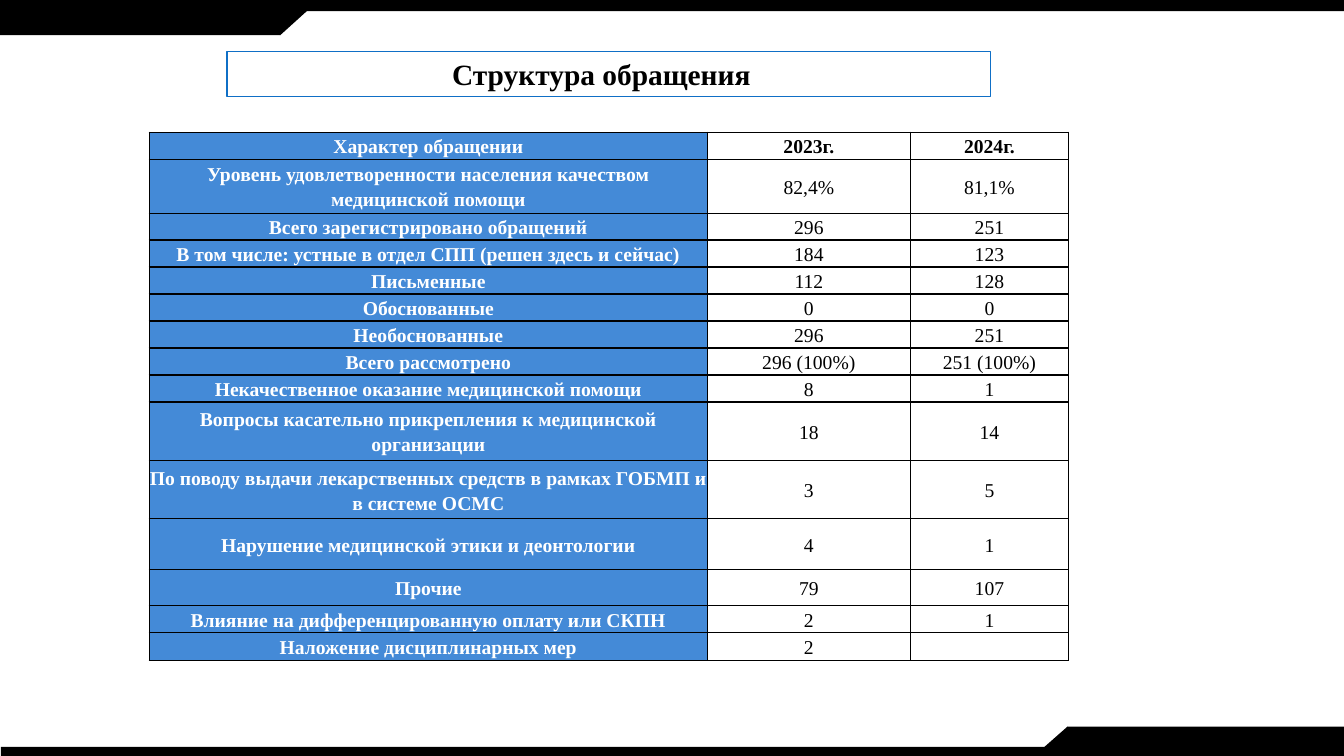
from pptx import Presentation
from pptx.dml.color import RGBColor
from pptx.enum.shapes import MSO_SHAPE
from pptx.enum.text import MSO_ANCHOR, MSO_AUTO_SIZE, PP_ALIGN
from pptx.oxml import parse_xml
from pptx.oxml.ns import nsdecls
from pptx.util import Cm, Pt

RECT = MSO_SHAPE.RECTANGLE
MERGE = MSO_SHAPE.FLOWCHART_MERGE
MIDDLE = MSO_ANCHOR.MIDDLE
CENTER = PP_ALIGN.CENTER
FIXED = MSO_AUTO_SIZE.NONE

COLORS = {"black": "000000", "white": "FFFFFF", "blue": "448AD7", "frame": "0F6FC6"}
FONT = "Times New Roman"
WIDTH, HEIGHT = 33.87, 19.05

COLS = [14.07, 5.11, 3.99]
LOW = 0.68
# Each row: label, 2023, 2024, height
ROWS = [
    ("Характер обращении", "2023г.", "2024г.", LOW),
    ("Уровень удовлетворенности населения качеством медицинской помощи",
     "82,4%", "81,1%", 2 * LOW),
    ("Всего зарегистрировано обращений", "296", "251", LOW),
    ("В том числе: устные в отдел СПП (решен здесь и сейчас)", "184", "123", LOW),
    ("Письменные", "112", "128", LOW),
    ("Обоснованные", "0", "0", LOW),
    ("Необоснованные", "296", "251", LOW),
    ("Всего рассмотрено", "296 (100%)", "251 (100%)", LOW),
    ("Некачественное оказание медицинской помощи", "8", "1", LOW),
    ("Вопросы касательно прикрепления к медицинской организации", "18", "14", 1.47),
    ("По поводу выдачи лекарственных средств в рамках ГОБМП и в системе ОСМС",
     "3", "5", 1.47),
    ("Нарушение медицинской этики и деонтологии", "4", "1", 1.28),
    ("Прочие", "79", "107", 0.91),
    ("Влияние на дифференцированную оплату или СКПН", "2", "1", LOW),
    ("Наложение дисциплинарных мер", "2", "", LOW),
]


def color(name):
    return RGBColor.from_string(COLORS[name])


def write(frame, text, size=14, bold=False, ink="black", space=1.0):
    par = frame.paragraphs[0]
    par.alignment = CENTER
    par.line_spacing = space
    run = par.add_run()
    run.text = text
    font = run.font
    font.name, font.size, font.bold = FONT, Pt(size), bold
    font.color.rgb = color(ink)


def paint(item, name):
    item.fill.solid()
    item.fill.fore_color.rgb = color(name)


def border(cell):
    props = cell._tc.get_or_add_tcPr()
    for side in "LRTB":
        props.append(parse_xml(
            f'<a:ln{side} {nsdecls("a")} w="12700"><a:solidFill>'
            f'<a:srgbClr val="{COLORS["black"]}"/></a:solidFill></a:ln{side}>'))


class Page:
    """Holds the slide being built and the look of its elements."""

    def __init__(self, deck):
        self.slide = deck.slides.add_slide(deck.slide_layouts[5])

    def block(self, kind, left, top, width, height, turn=0):
        shape = self.slide.shapes.add_shape(
            kind, Cm(left), Cm(top), Cm(width), Cm(height))
        shape.shadow.inherit = False
        shape.rotation = turn
        paint(shape, "black")
        shape.line.fill.background()

    def title(self, text, left, top, width, height):
        box = self.slide.shapes.title
        box.left, box.top = Cm(left), Cm(top)
        box.width, box.height = Cm(width), Cm(height)
        paint(box, "white")
        box.line.color.rgb = color("frame")
        box.line.width = Pt(1)
        frame = box.text_frame
        frame.auto_size = FIXED
        frame.word_wrap = True
        frame.vertical_anchor = MIDDLE
        frame.margin_left, frame.margin_right = Cm(0.1), Cm(0.48)
        frame.margin_top = frame.margin_bottom = Cm(0.13)
        write(frame, text, size=21, bold=True)

    def table(self, rows, cols, left, top):
        tall = sum(row[-1] for row in rows)
        grid = self.slide.shapes.add_table(
            len(rows), len(cols), Cm(left), Cm(top), Cm(sum(cols)), Cm(tall)).table
        grid.first_row = grid.horz_banding = False
        for col, width in zip(grid.columns, cols):
            col.width = Cm(width)
        for r, (*texts, height) in enumerate(rows):
            grid.rows[r].height = Cm(height)
            for c, text in enumerate(texts):
                self.cell(grid.cell(r, c), text, label=c == 0, head=r == 0)

    def cell(self, cell, text, label, head):
        cell.margin_left = cell.margin_right = 0
        cell.margin_top = cell.margin_bottom = 0
        cell.vertical_anchor = MIDDLE
        border(cell)
        paint(cell, "blue" if label else "white")
        write(cell.text_frame, text, bold=label or head,
              ink="white" if label else "black", space=1.15)


def main():
    deck = Presentation()
    deck.slide_width, deck.slide_height = Cm(WIDTH), Cm(HEIGHT)
    page = Page(deck)
    page.block(RECT, 0, 0, WIDTH, 0.28)
    page.block(RECT, 0.02, 18.82, WIDTH - 0.02, 0.23)
    page.block(RECT, 0, 0.13, 7.06, 0.76)
    page.block(MERGE, 6.22, 0.13, 1.68, 0.76)
    page.block(RECT, 26.9, 18.31, WIDTH - 26.9, 0.74)
    page.block(MERGE, 26.06, 18.31, 1.68, 0.74, turn=180)
    page.title("Структура обращения", 5.72, 1.3, 19.25, 1.14)
    page.table(ROWS, COLS, 3.76, 3.33)
    deck.save("out.pptx")


if __name__ == "__main__":
    main()
